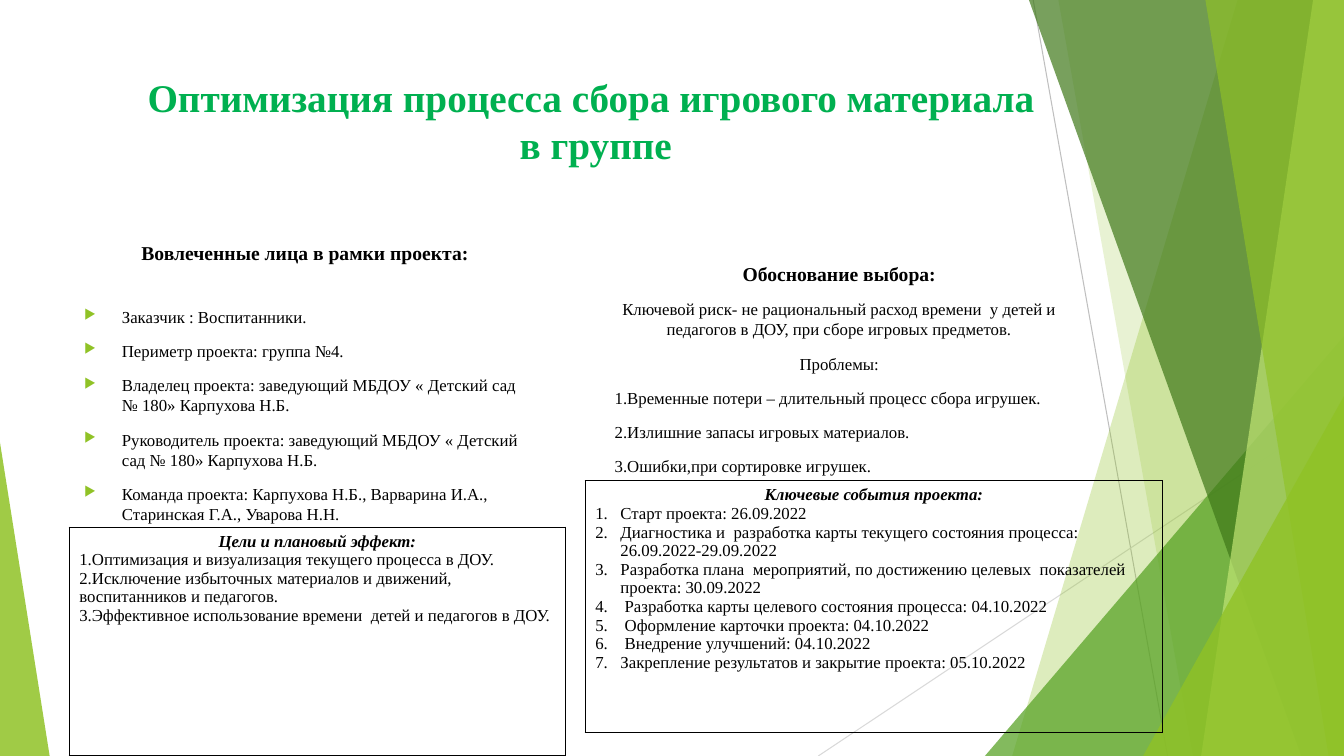
from dataclasses import dataclass

from lxml import etree
from pptx import Presentation
from pptx.dml.color import RGBColor
from pptx.enum.shapes import MSO_CONNECTOR, MSO_SHAPE
from pptx.enum.text import MSO_ANCHOR, PP_ALIGN
from pptx.oxml.ns import qn
from pptx.util import Pt

LEFT, CENTER = PP_ALIGN.LEFT, PP_ALIGN.CENTER
TOP, BOTTOM = MSO_ANCHOR.TOP, MSO_ANCHOR.BOTTOM
TRIANGLE, STRAIGHT = MSO_SHAPE.ISOSCELES_TRIANGLE, MSO_CONNECTOR.STRAIGHT
WIDTH, HEIGHT = 960, 540


@dataclass(frozen=True)
class Theme:
    font: str = "Times New Roman"
    title: str = "00B050"
    text: str = "000000"
    lime: str = "90C226"
    green: str = "54A021"
    forest: str = "3F7819"
    pale: str = "C0E474"
    line_dark: str = "BFBFBF"
    line_light: str = "D9D9D9"
    title_size: int = 28
    heading_size: int = 14
    body_size: int = 12
    body_leading: float = 1.2
    table_leading: float = 1.11


THEME = Theme()

TITLE = "Оптимизация процесса сбора игрового материала \nв группе"
PEOPLE_HEADING = "Вовлеченные лица в рамки проекта:"
PEOPLE = [
    "Заказчик : Воспитанники.",
    "Периметр проекта: группа №4.",
    "Владелец проекта: заведующий МБДОУ « Детский сад № 180» Карпухова Н.Б.",
    "Руководитель проекта: заведующий МБДОУ « Детский сад № 180» Карпухова Н.Б.",
    "Команда проекта: Карпухова Н.Б., Варварина И.А., Старинская Г.А., Уварова Н.Н.",
]
REASON_HEADING = "Обоснование выбора:"
REASONS = [
    "Ключевой риск- не рациональный расход времени  у детей и педагогов в ДОУ, при сборе игровых предметов.",
    "Проблемы:",
]
PROBLEMS = [
    "1.Временные потери – длительный процесс сбора игрушек.",
    "2.Излишние запасы игровых материалов.",
    "3.Ошибки,при сортировке игрушек.",
]
GOALS_HEADING = "Цели и плановый эффект:"
GOALS = [
    "1.Оптимизация и визуализация текущего процесса в ДОУ.",
    "2.Исключение избыточных материалов и движений, воспитанников и педагогов.",
    "3.Эффективное использование времени  детей и педагогов в ДОУ.",
]
EVENTS_HEADING = "Ключевые события проекта:"
EVENTS = [
    "Старт проекта: 26.09.2022",
    "Диагностика и  разработка карты текущего состояния процесса: 26.09.2022-29.09.2022",
    "Разработка плана  мероприятий, по достижению целевых  показателей проекта: 30.09.2022",
    " Разработка карты целевого состояния процесса: 04.10.2022",
    " Оформление карточки проекта: 04.10.2022",
    " Внедрение улучшений: 04.10.2022",
    "Закрепление результатов и закрытие проекта: 05.10.2022",
]


def set_attributes(target, values):
    for name, value in values.items():
        setattr(target, name, value)


def add_child(parent, tag, **attributes):
    return etree.SubElement(parent, qn(tag), attributes)


def paint(shape, color, opacity):
    shape.shadow.inherit = False
    shape.line.fill.background()
    shape.fill.solid()
    shape.fill.fore_color.rgb = RGBColor.from_string(color)
    color_node = shape.fill._xPr.find(qn("a:solidFill"))[0]
    add_child(color_node, "a:alpha", val=str(opacity * 1000))


def add_facet(slide, top_x, bottom_x, color, opacity):
    builder = slide.shapes.build_freeform(Pt(top_x), 0, scale=1.0)
    corners = [(WIDTH, 0), (WIDTH, HEIGHT), (bottom_x, HEIGHT)]
    builder.add_line_segments([(Pt(x), Pt(y)) for x, y in corners], close=True)
    paint(builder.convert_to_shape(), color, opacity)


def add_triangle(slide, left, top, width, apex, color, opacity):
    shape = slide.shapes.add_shape(TRIANGLE, Pt(left), Pt(top), Pt(width), Pt(HEIGHT - top))
    shape.adjustments[0] = apex
    paint(shape, color, opacity)


def add_line(slide, start, end, color):
    line = slide.shapes.add_connector(STRAIGHT, *[Pt(value) for value in start + end])
    line.line.width = Pt(0.75)
    line.line.color.rgb = RGBColor.from_string(color)
    add_child(line._element.spPr, "a:effectLst")


def add_marker(paragraph, marker, indent):
    properties = paragraph._p.get_or_add_pPr()
    properties.set("marL", str(Pt(indent)))
    properties.set("indent", str(-Pt(indent)))
    if marker == "number":
        add_child(properties, "a:buAutoNum", type="arabicPeriod")
    else:
        add_child(add_child(properties, "a:buClr"), "a:srgbClr", val=THEME.lime)
        add_child(properties, "a:buSzPct", val="80000")
        add_child(properties, "a:buChar", char=marker)


def write(frame, texts, size=THEME.body_size, color=THEME.text, align=LEFT, bold=False,
          italic=False, before=10, leading=THEME.body_leading, marker=None, indent=27):
    for text in texts:
        paragraph = frame.paragraphs[-1]
        if paragraph.runs:
            paragraph = frame.add_paragraph()
        set_attributes(paragraph, {
            "alignment": align,
            "space_before": Pt(before),
            "line_spacing": Pt(round(size * leading, 1)),
        })
        if marker:
            add_marker(paragraph, marker, indent)
        for index, line in enumerate(text.splitlines()):
            if index:
                paragraph.add_line_break()
            run = paragraph.add_run()
            run.text = line
            set_attributes(run.font, {
                "name": THEME.font, "size": Pt(size), "bold": bold, "italic": italic,
            })
            run.font.color.rgb = RGBColor.from_string(color)


def add_text_box(slide, left, top, width, height, anchor=TOP, bottom_inset=3.6):
    box = slide.shapes.add_textbox(Pt(left), Pt(top), Pt(width), Pt(height))
    set_attributes(box.text_frame, {
        "word_wrap": True, "vertical_anchor": anchor, "margin_bottom": Pt(bottom_inset),
    })
    return box.text_frame


def add_framed_list(slide, left, top, width, height, heading, items, marker=None):
    table = slide.shapes.add_table(1, 1, Pt(left), Pt(top), Pt(width), Pt(height)).table
    set_attributes(table, {"first_row": False, "horz_banding": False})
    cell = table.cell(0, 0)
    properties = cell._tc.get_or_add_tcPr()
    for side in ("a:lnL", "a:lnR", "a:lnT", "a:lnB"):
        border = add_child(properties, side, w=str(Pt(1)))
        add_child(add_child(border, "a:solidFill"), "a:srgbClr", val=THEME.text)
    cell.fill.background()
    spacing = {"before": 0, "leading": THEME.table_leading}
    write(cell.text_frame, [heading], align=CENTER, bold=True, italic=True, **spacing)
    write(cell.text_frame, items, marker=marker, indent=18, **spacing)


def add_background(slide):
    add_line(slide, (738, 0), (834, HEIGHT), THEME.line_dark)
    add_line(slide, (WIDTH, 290), (584.5, HEIGHT), THEME.line_light)
    add_facet(slide, 884, 723, THEME.lime, 30)
    add_facet(slide, 756, 852, THEME.lime, 20)
    add_triangle(slide, 703.5, 240, 256.5, 1, THEME.green, 72)
    add_facet(slide, 735, 929.5, THEME.forest, 70)
    add_facet(slide, 938, 858, THEME.pale, 70)
    add_facet(slide, 861, 949, THEME.lime, 65)
    add_triangle(slide, 816.5, 283, 143.5, 1, THEME.lime, 80)
    add_triangle(slide, 0, 316, 35.5, 0, THEME.lime, 85)


def main():
    presentation = Presentation()
    set_attributes(presentation, {"slide_width": Pt(WIDTH), "slide_height": Pt(HEIGHT)})
    slide = presentation.slides.add_slide(presentation.slide_layouts[6])
    add_background(slide)

    title = add_text_box(slide, 45.5, 49, 760, 104)
    write(title, [TITLE], THEME.title_size, THEME.title, CENTER, bold=True, before=0)

    heading = {"size": THEME.heading_size, "align": CENTER, "bold": True}
    write(add_text_box(slide, 53, 140.5, 330, 52, BOTTOM), [PEOPLE_HEADING], **heading)
    write(add_text_box(slide, 53, 215.5, 330, 260), PEOPLE, marker="▶")

    reasons = add_text_box(slide, 432, 170, 335, 212, BOTTOM, bottom_inset=42)
    write(reasons, [REASON_HEADING], **heading)
    write(reasons, REASONS, align=CENTER)
    write(reasons, PROBLEMS)

    add_framed_list(slide, 49.5, 376.5, 354.5, 163.5, GOALS_HEADING, GOALS)
    add_framed_list(slide, 418, 343.5, 412.5, 180, EVENTS_HEADING, EVENTS, "number")
    presentation.save("out.pptx")


if __name__ == "__main__":
    main()
